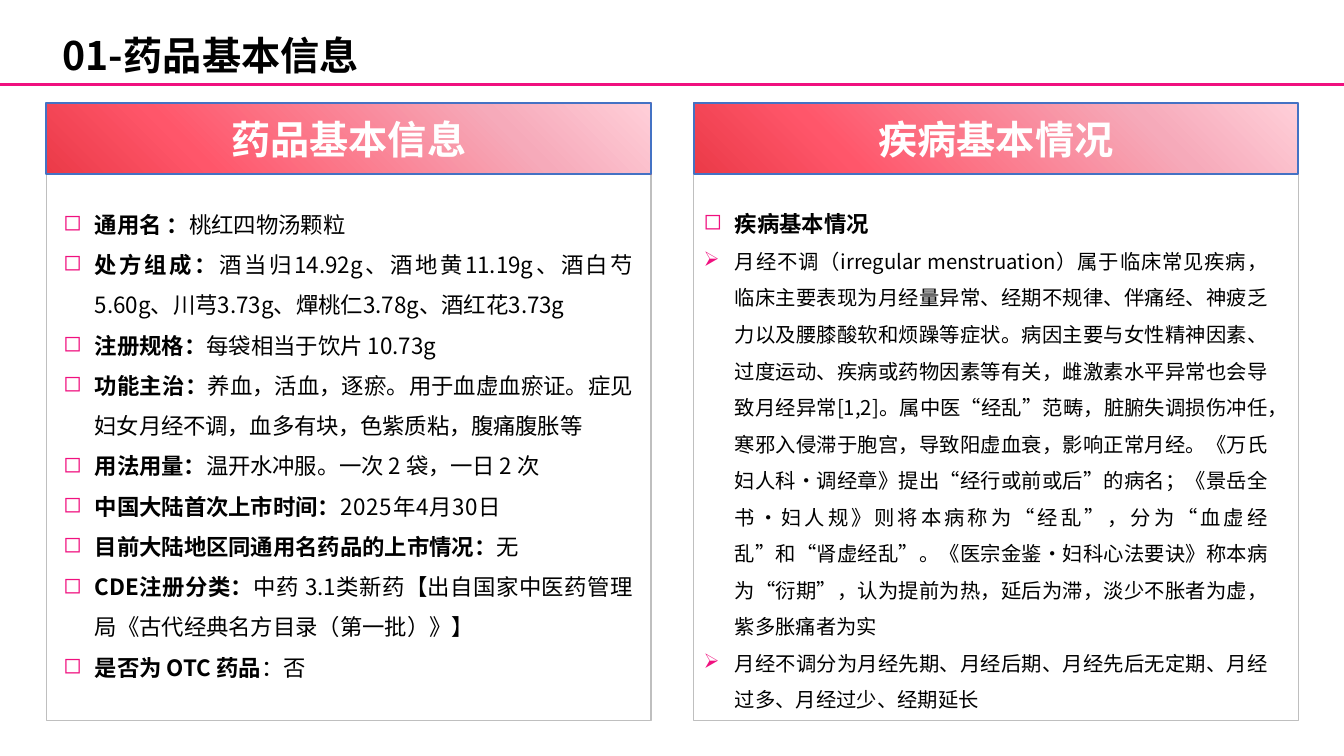
from copy import deepcopy
from dataclasses import dataclass

from lxml import etree
from pptx import Presentation
from pptx.dml.color import RGBColor
from pptx.enum import lang, shapes, text
from pptx.oxml import ns
from pptx.util import Cm, Pt


@dataclass(frozen=True)
class Theme:
    font: str = "Noto Sans CJK SC"
    accent: str = "F0107F"
    ink: str = "000000"
    white: str = "FFFFFF"
    panel_line: str = "BFBFBF"
    header_line: str = "4472C4"
    gradient: tuple = ((0, "EB3A48"), (0.25, "FF566A"), (0.75, "F6AABA"), (1, "FFCFD9"))
    heading: float = 28
    body: float = 16
    detail: float = 14.5


theme = Theme()


def style_run(run, size, color=theme.ink, bold=False, spacing=0):
    run.font.name = theme.font
    run.font.size = Pt(size)
    run.font.bold = bold
    run.font.color.rgb = RGBColor.from_string(color)
    run.font.language_id = lang.MSO_LANGUAGE_ID.SIMPLIFIED_CHINESE
    properties = run.font._element
    if spacing:
        properties.set("spc", str(round(spacing * 100)))
    latin = properties.find(ns.qn("a:latin"))
    east_asian = etree.Element(ns.qn("a:ea"), typeface=theme.font)
    latin.addnext(east_asian)


def add_bullet(paragraph, character):
    paragraph.alignment = text.PP_ALIGN.JUSTIFY
    paragraph.line_spacing = 1.5
    properties = paragraph._p.get_or_add_pPr()
    properties.set("marL", str(Cm(0.79)))
    properties.set("indent", str(-Cm(0.79)))
    color = etree.SubElement(properties, ns.qn("a:buClr"))
    etree.SubElement(color, ns.qn("a:srgbClr"), val=theme.accent)
    etree.SubElement(properties, ns.qn("a:buChar"), char=character)


presentation = Presentation()
presentation.slide_width = Cm(33.87)
presentation.slide_height = Cm(19.05)
slide = presentation.slides.add_slide(presentation.slide_layouts[5])

# Content: each paragraph is a bullet, a size and runs of (text, bold, spacing)
drug_facts = [
    [("通用名 ：", True, 0), ("桃红四物汤颗粒", False, 0)],
    [("处方组成：", True, 0),
     ("酒当归14.92g、酒地黄11.19g、酒白芍5.60g、川芎3.73g、燀桃仁3.78g、酒红花3.73g", False, 0)],
    [("注册规格：", True, 0), ("每袋相当于饮片 10.73g ", False, 0)],
    [("功能主治", True, 0), ("：", True, -1.6),
     ("养血，活血，逐瘀。用于血虚血瘀证。症见妇女月经不调，血多有块，色紫质粘，腹痛腹胀等", False, -0.1)],
    [("用法用", True, 0), ("量：", True, -0.1), ("温开水冲服。一次 2 袋，一日 2 次", False, -0.1)],
    [("中国大陆首次上市时间：", True, 0), ("2025年4月30日", False, 0.5)],
    [("目前大陆地区同通用名药品的上市情况：", True, 0), ("无", False, 0.5)],
    [("CDE注册分类：", True, 0),
     ("中药 3.1类新药【出自国家中医药管理局《古代经典名方目录（第一批）》】", False, 0)],
    [("是否为 OTC 药品", True, 0), ("：否", False, 0)],
]
disease_overview = (
    "月经不调（irregular menstruation）属于临床常见疾病，临床主要表现为月经量异常、经期不规律、"
    "伴痛经、神疲乏力以及腰膝酸软和烦躁等症状。病因主要与女性精神因素、过度运动、疾病或药物因素等有关，"
    "雌激素水平异常也会导致月经异常[1,2]。属中医“经乱”范畴，脏腑失调损伤冲任，寒邪入侵滞于胞宫，"
    "导致阳虚血衰，影响正常月经。《万氏妇人科·调经章》提出“经行或前或后”的病名；"
    "《景岳全书·妇人规》则将本病称为“经乱”，分为“血虚经乱”和“肾虚经乱”。"
    "《医宗金鉴·妇科心法要诀》称本病为“衍期”，认为提前为热，延后为滞，淡少不胀者为虚，紫多胀痛者为实"
)
disease_types = "月经不调分为月经先期、月经后期、月经先后无定期、月经过多、月经过少、经期延长"
drug_paragraphs = [("◻", theme.body, runs) for runs in drug_facts]
disease_paragraphs = [
    ("◻", theme.body, [("疾病基本情况", True, 0)]),
    ("➢", theme.detail, [(disease_overview, False, 0)]),
    ("➢", theme.detail, [(disease_types, False, 0)]),
]

# Two columns: panel left, header, text box (left, top, width, height), paragraphs
columns = [
    (1.17, "药品基本信息", (1.35, 4.85, 14.86, 14.17), drug_paragraphs),
    (17.48, "疾病基本情况", (17.48, 4.83, 14.71, 12.57), disease_paragraphs),
]
for left, heading, box, paragraphs in columns:
    # Outlined panel
    panel = slide.shapes.add_shape(
        shapes.MSO_SHAPE.RECTANGLE, Cm(left), Cm(4.32), Cm(15.24), Cm(13.84))
    panel.shadow.inherit = False
    panel.fill.background()
    panel.line.color.rgb = RGBColor.from_string(theme.panel_line)
    panel.line.width = Pt(1)

    # Gradient header
    header = slide.shapes.add_shape(
        shapes.MSO_SHAPE.RECTANGLE, Cm(left), Cm(2.59), Cm(15.24), Cm(1.8))
    header.shadow.inherit = False
    header.line.color.rgb = RGBColor.from_string(theme.header_line)
    header.line.width = Pt(1.5)
    header.fill.gradient()
    header.fill.gradient_angle = 45
    stop_list = header._element.spPr.find(".//" + ns.qn("a:gsLst"))
    for stop in list(stop_list):
        stop_list.append(deepcopy(stop))
    for stop, (position, color) in zip(header.fill.gradient_stops, theme.gradient):
        stop.position = position
        stop.color.rgb = RGBColor.from_string(color)
    header.text_frame.text = heading
    header.text_frame.vertical_anchor = text.MSO_ANCHOR.MIDDLE
    header.text_frame.paragraphs[0].alignment = text.PP_ALIGN.CENTER
    style_run(header.text_frame.paragraphs[0].runs[0], theme.heading, theme.white, True)

    # Bulleted text
    frame = slide.shapes.add_textbox(*map(Cm, box)).text_frame
    frame.word_wrap = True
    for index, (bullet, size, runs) in enumerate(paragraphs):
        paragraph = frame.paragraphs[0] if index == 0 else frame.add_paragraph()
        add_bullet(paragraph, bullet)
        for words, bold, spacing in runs:
            run = paragraph.add_run()
            run.text = words
            style_run(run, size, bold=bold, spacing=spacing)

# Rule under the title
rule = slide.shapes.add_connector(
    shapes.MSO_CONNECTOR.STRAIGHT, 0, Cm(2.13), presentation.slide_width, Cm(2.13))
rule.line.color.rgb = RGBColor.from_string(theme.accent)
rule.line.width = Pt(2.25)
etree.SubElement(rule._element.spPr, ns.qn("a:effectLst"))

# Title
title = slide.shapes.title
title.left, title.top, title.width, title.height = Cm(1.32), Cm(0.61), Cm(27.18), Cm(1.52)
title.text_frame.text = "01-药品基本信息"
title.text_frame.auto_size = text.MSO_AUTO_SIZE.NONE
title.text_frame.vertical_anchor = text.MSO_ANCHOR.MIDDLE
title.text_frame.paragraphs[0].alignment = text.PP_ALIGN.LEFT
style_run(title.text_frame.paragraphs[0].runs[0], theme.heading, bold=True, spacing=0.1)

presentation.save("out.pptx")
